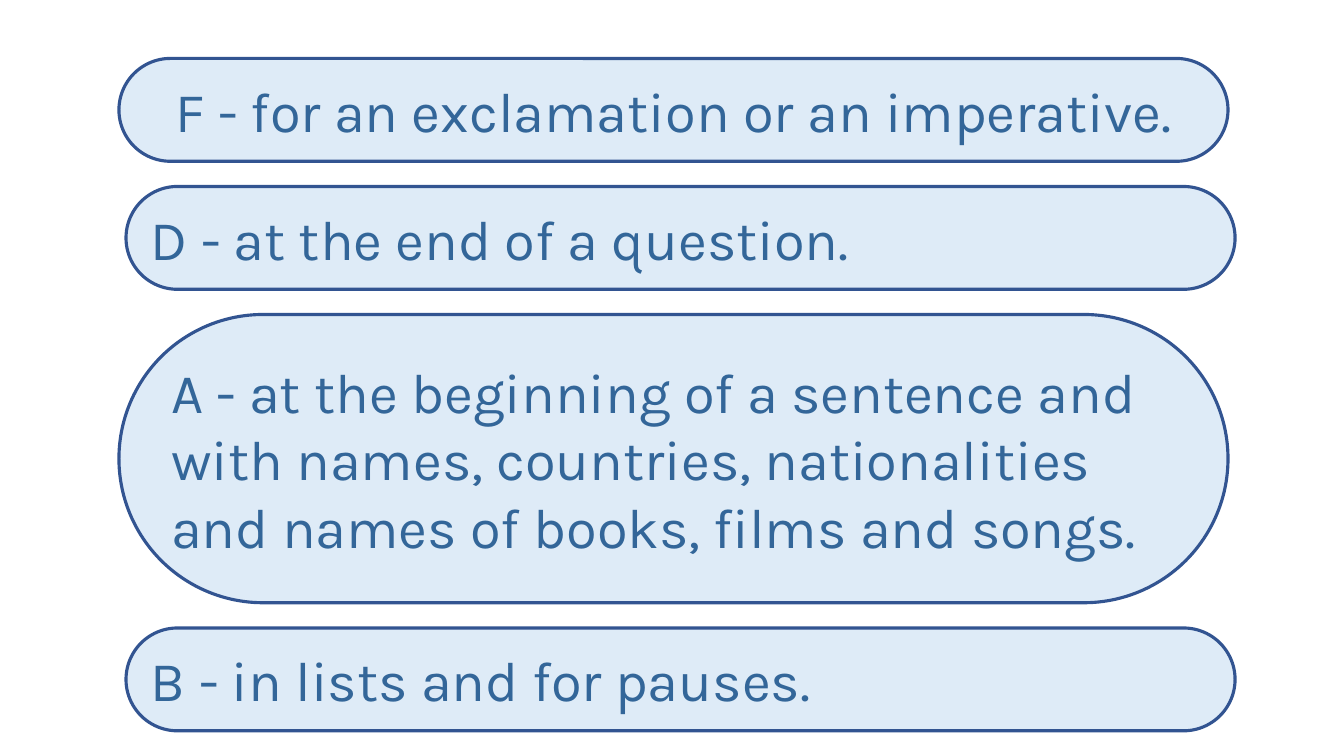
"""Build a slide of punctuation rules set in stacked rounded panels."""
from dataclasses import dataclass

from pptx import Presentation
from pptx.dml.color import RGBColor
from pptx.enum.shapes import MSO_SHAPE
from pptx.enum.text import MSO_ANCHOR, PP_ALIGN
from pptx.slide import Slide
from pptx.util import Inches, Pt

ROUNDED = MSO_SHAPE.ROUNDED_RECTANGLE
MIDDLE = MSO_ANCHOR.MIDDLE
LEFT = PP_ALIGN.LEFT
CENTER = PP_ALIGN.CENTER

PANEL_BLUE = RGBColor(0xDE, 0xEB, 0xF7)
OUTLINE_BLUE = RGBColor(0x32, 0x54, 0x91)
TEXT_BLUE = RGBColor(0x33, 0x66, 0x99)

BLANK_LAYOUT = 6
FIRST_TOP = 0.58
PANEL_WIDTH = 11
PANEL_GAP = 0.25
OUTER_LEFT = 1.18
INNER_LEFT = 1.25


@dataclass(frozen=True)
class Rule:
    text: str
    left: float
    height: float = 1.02
    alignment: PP_ALIGN = LEFT


RULES = (
    Rule("F - for an exclamation or an imperative.", OUTER_LEFT, alignment=CENTER),
    Rule("D - at the end of a question.", INNER_LEFT),
    Rule(
        "A - at the beginning of a sentence and with names, countries, "
        "nationalities and names of books, films and songs.",
        OUTER_LEFT,
        height=2.86,
    ),
    Rule("B - in lists and for pauses.", INNER_LEFT),
)


def add_rule(slide: Slide, rule: Rule, top: float) -> None:
    panel = slide.shapes.add_shape(
        ROUNDED, Inches(rule.left), Inches(top), Inches(PANEL_WIDTH), Inches(rule.height)
    )
    panel.adjustments[0] = 0.5
    panel.shadow.inherit = False
    panel.fill.solid()
    panel.fill.fore_color.rgb = PANEL_BLUE
    panel.line.color.rgb = OUTLINE_BLUE
    panel.line.width = Pt(2.25)

    frame = panel.text_frame
    frame.word_wrap = True
    frame.vertical_anchor = MIDDLE
    paragraph = frame.paragraphs[0]
    paragraph.text = rule.text
    paragraph.alignment = rule.alignment
    paragraph.font.name = "Karla"
    paragraph.font.size = Pt(40)
    paragraph.font.color.rgb = TEXT_BLUE


def main() -> None:
    presentation = Presentation()
    presentation.slide_width = Inches(13.33)
    presentation.slide_height = Inches(7.5)
    slide = presentation.slides.add_slide(presentation.slide_layouts[BLANK_LAYOUT])
    top = FIRST_TOP
    for rule in RULES:
        add_rule(slide, rule, top)
        top += rule.height + PANEL_GAP
    presentation.save("out.pptx")


if __name__ == "__main__":
    main()
